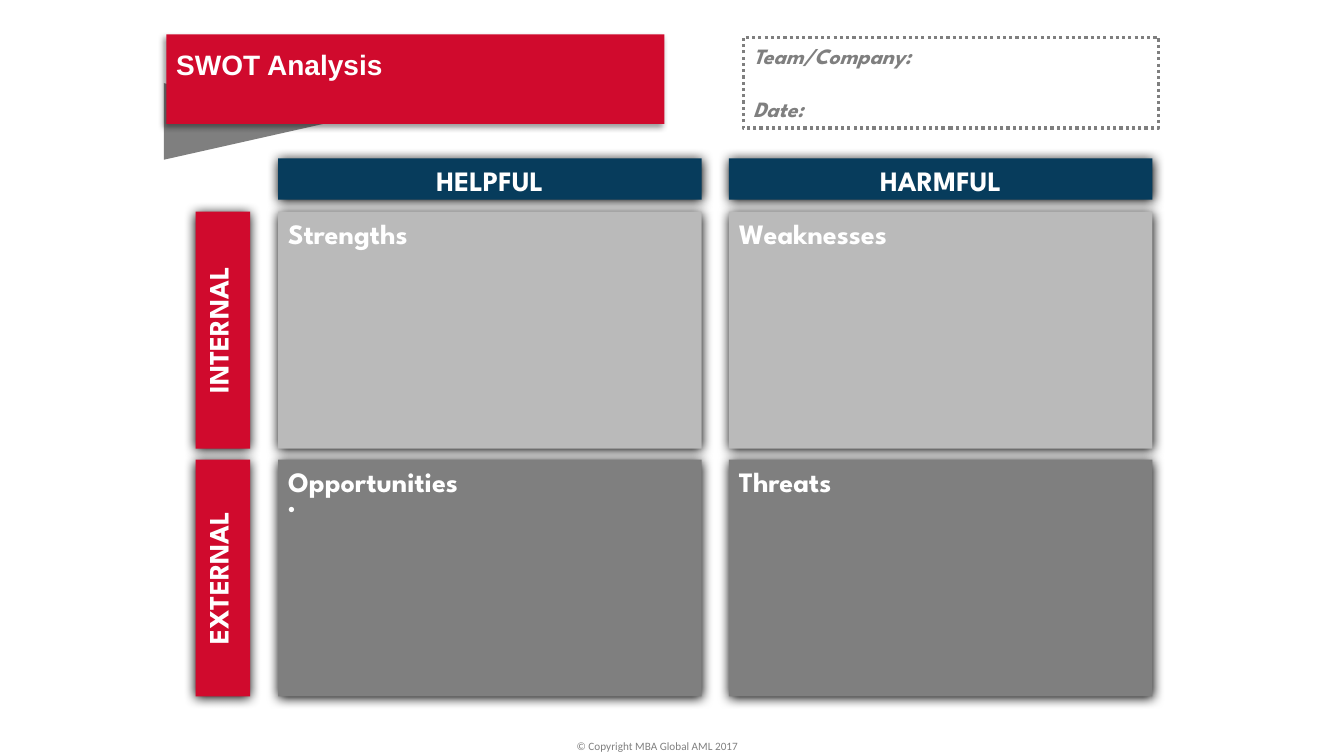
from lxml import etree
from pptx import Presentation
from pptx.dml.color import RGBColor
from pptx.enum.dml import MSO_LINE
from pptx.enum.shapes import MSO_SHAPE
from pptx.enum.text import MSO_ANCHOR, PP_ALIGN
from pptx.oxml.ns import qn
from pptx.util import Inches, Pt

RECTANGLE = MSO_SHAPE.RECTANGLE
TRIANGLE = MSO_SHAPE.FLOWCHART_EXTRACT
TOP, MIDDLE = MSO_ANCHOR.TOP, MSO_ANCHOR.MIDDLE
LEFT, CENTER = PP_ALIGN.LEFT, PP_ALIGN.CENTER
DOTTED = MSO_LINE.ROUND_DOT

RED = RGBColor(0xD0, 0x0A, 0x2D)
NAVY = RGBColor(0x07, 0x3C, 0x5C)
LIGHT_GRAY = RGBColor(0xBA, 0xBA, 0xBA)
GRAY = RGBColor(0x7F, 0x7F, 0x7F)
FOOTER_GRAY = RGBColor(0x80, 0x80, 0x80)
WHITE = RGBColor(0xFF, 0xFF, 0xFF)
HEADING_FONT = "League Spartan"

TITLE = "SWOT Analysis"
DETAILS = ["Team/Company:", "Date:"]
COLUMNS = ["HELPFUL", "HARMFUL"]
ROWS = [
    ("INTERNAL", LIGHT_GRAY, ["Strengths", "Weaknesses"]),
    ("EXTERNAL", GRAY, ["Opportunities", "Threats"]),
]
BULLETED = "Opportunities"
COPYRIGHT = "© Copyright MBA Global AML 2017"

# Grid, in inches
GRID_LEFT, GRID_TOP = 2.76, 2.1
CELL_WIDTH, CELL_HEIGHT = 4.2, 2.35
COLUMN_STEP, ROW_STEP = 4.47, 2.46
HEADER_TOP, HEADER_HEIGHT = 1.57, 0.41
LABEL_LEFT, LABEL_WIDTH = 1.94, 0.54

# Shadows: opacity %, blur pt, distance pt, direction in degrees
GRID_SHADOW = (100, 8.5, 1, 90)
TITLE_SHADOW = (40, 4, 3, 135)


def add_shadow(shape, opacity, blur, distance, direction):
    effects = shape.element.spPr.find(qn("a:effectLst"))
    shadow = etree.SubElement(
        effects, qn("a:outerShdw"), blurRad=str(Pt(blur)),
        dist=str(Pt(distance)), dir=str(direction * 60000), rotWithShape="0")
    color = etree.SubElement(shadow, qn("a:srgbClr"), val="000000")
    etree.SubElement(color, qn("a:alpha"), val=str(opacity * 1000))


def add_block(slide, box, fill=None, shadow=None, kind=RECTANGLE):
    """Add an unlined shape at box (left, top, width, height in inches)."""
    shape = slide.shapes.add_shape(kind, *map(Inches, box))
    shape.shadow.inherit = False
    shape.line.fill.background()
    if fill is None:
        shape.fill.background()
    else:
        shape.fill.solid()
        shape.fill.fore_color.rgb = fill
    if shadow:
        add_shadow(shape, *shadow)
    return shape


def write(shape, lines, size=20, font=HEADING_FONT, color=WHITE, bold=True,
          italic=False, align=LEFT, anchor=TOP):
    frame = shape.text_frame
    frame.text = "\n".join(lines)
    frame.vertical_anchor = anchor
    for paragraph in frame.paragraphs:
        paragraph.alignment = align
        for run in paragraph.runs:
            run.font.size = Pt(size)
            run.font.name = font
            run.font.bold = bold
            run.font.italic = italic
            run.font.color.rgb = color


def add_bullet(shape):
    """Add an open bullet point, ready to be filled in."""
    paragraph = shape.text_frame.add_paragraph()
    paragraph.alignment = LEFT
    properties = paragraph._p.get_or_add_pPr()
    properties.set("marL", str(Inches(0.19)))
    properties.set("indent", str(-Inches(0.19)))
    etree.SubElement(properties, qn("a:buFont"), typeface="Arial")
    etree.SubElement(properties, qn("a:buChar"), char="•")
    run = paragraph.add_run()
    run.text = " "
    run.font.size = Pt(14)
    run.font.name = HEADING_FONT
    run.font.color.rgb = WHITE


def add_grid(slide):
    for column, heading in enumerate(COLUMNS):
        left = GRID_LEFT + column * COLUMN_STEP
        header = add_block(slide, (left, HEADER_TOP, CELL_WIDTH, HEADER_HEIGHT),
                           NAVY, GRID_SHADOW)
        write(header, [heading], align=CENTER)

    for row, (side, fill, quadrants) in enumerate(ROWS):
        top = GRID_TOP + row * ROW_STEP
        label = add_block(slide, (LABEL_LEFT, top, LABEL_WIDTH, CELL_HEIGHT),
                          RED, GRID_SHADOW)
        write(label, [side], align=CENTER)
        label.element.txBody.find(qn("a:bodyPr")).set("vert", "vert270")
        for column, name in enumerate(quadrants):
            left = GRID_LEFT + column * COLUMN_STEP
            cell = add_block(slide, (left, top, CELL_WIDTH, CELL_HEIGHT),
                             fill, GRID_SHADOW)
            write(cell, [name])
            if name == BULLETED:
                add_bullet(cell)


def add_title(slide):
    fold = add_block(slide, (2.09, 0.36, 0.76, 1.69), GRAY, kind=TRIANGLE)
    fold.rotation = 90
    banner = add_block(slide, (1.65, 0.34, 4.94, 0.89), RED, TITLE_SHADOW)
    write(banner, [TITLE], font="Arial")
    banner.text_frame.margin_top = Inches(0.13)


def add_details(slide):
    details = add_block(slide, (7.37, 0.37, 4.12, 0.9))
    details.line.color.rgb = GRAY
    details.line.width = Pt(2.25)
    details.line.dash_style = DOTTED
    write(details, DETAILS, size=15.6, color=GRAY, italic=True, anchor=MIDDLE)
    details.text_frame.paragraphs[1].space_before = Pt(19)


def add_footer(slide):
    footer = slide.shapes.add_textbox(*map(Inches, (5.62, 7.29, 2.1, 0.24)))
    footer.text_frame.word_wrap = False
    write(footer, [COPYRIGHT], size=8, font="Calibri", color=FOOTER_GRAY,
          bold=False)


def main():
    presentation = Presentation()
    presentation.slide_width = Inches(13.33)
    presentation.slide_height = Inches(7.5)
    slide = presentation.slides.add_slide(presentation.slide_layouts[6])
    add_grid(slide)
    add_title(slide)
    add_details(slide)
    add_footer(slide)
    presentation.save("out.pptx")


if __name__ == "__main__":
    main()
